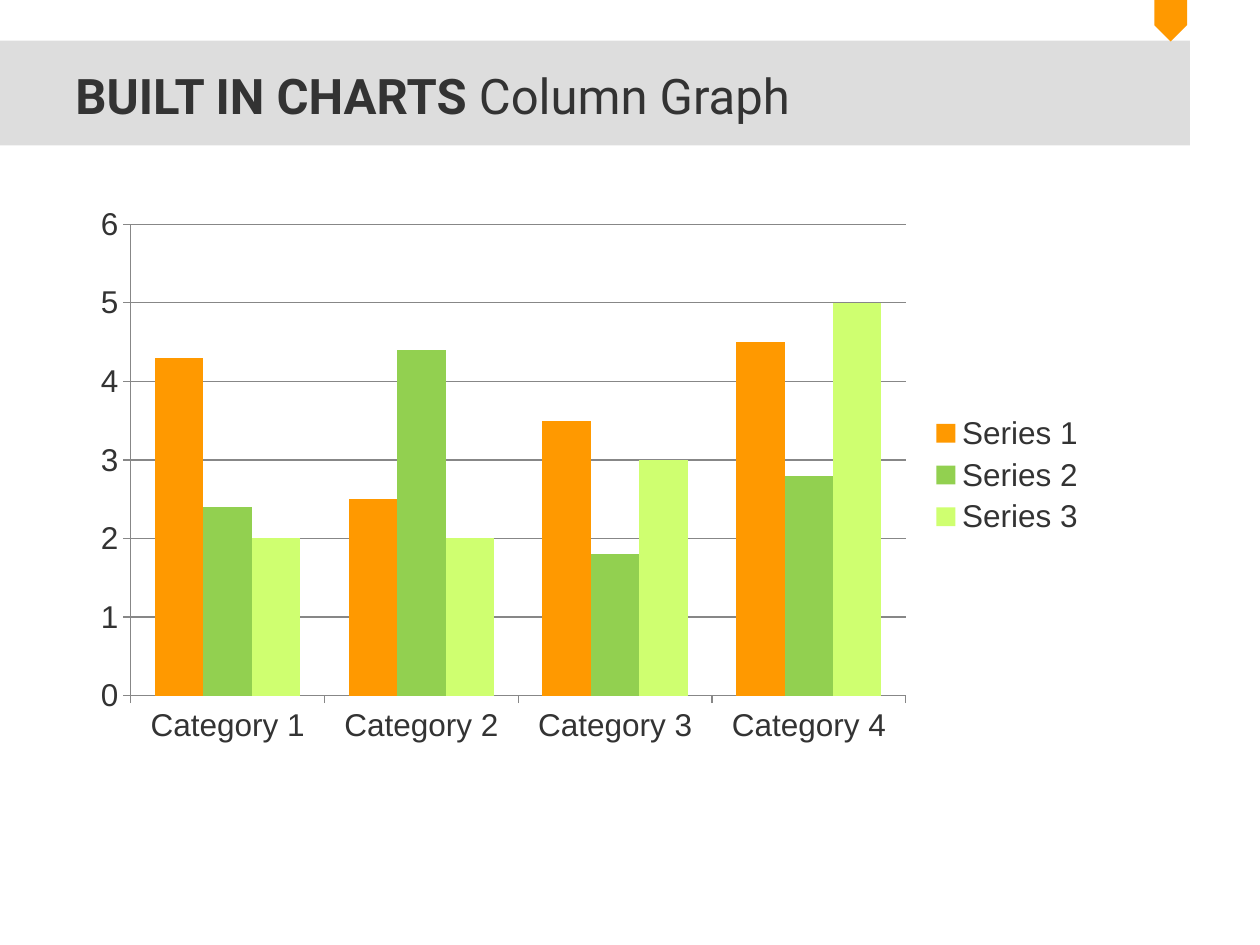
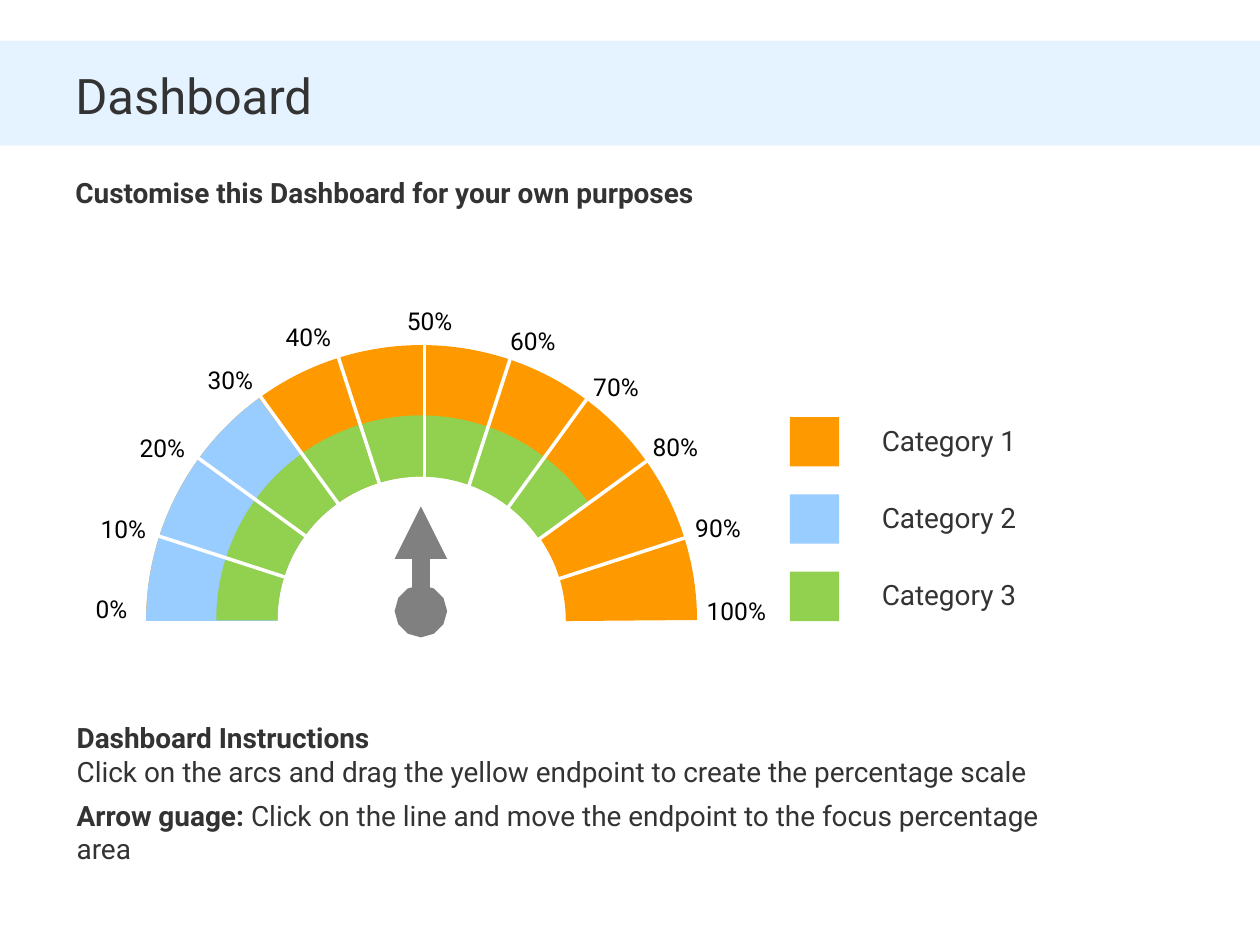
import math
from dataclasses import dataclass
from lxml import etree
from pptx import Presentation
from pptx.chart.data import CategoryChartData
from pptx.dml.color import RGBColor
from pptx.enum import chart as charts, shapes, text
from pptx.oxml import ns
from pptx.util import Pt


@dataclass(frozen=True)
class Theme:
    ink: str = "333333"
    black: str = "000000"
    white: str = "FFFFFF"
    band: str = "DDDDDD"
    orange: str = "FF9900"
    blue: str = "99CCFF"
    green: str = "92D050"
    lime: str = "CFFF70"
    needle: str = "808080"
    axis: str = "878787"
    font: str = "Roboto"
    chart_font: str = "Arial"
    title_size: int = 28
    chart_size: int = 18
    body_size: int = 16
    label_size: int = 14


theme = Theme()


def add_block(slide, kind, left, top, width, height, fill):
    shape = slide.shapes.add_shape(kind, Pt(left), Pt(top), Pt(width), Pt(height))
    shape.shadow.inherit = False
    shape.fill.solid()
    shape.fill.fore_color.rgb = RGBColor.from_string(fill)
    shape.line.fill.background()
    return shape


def add_text(parent, left, top, width, height, paragraphs, size, colour=theme.ink, grow=True):
    """Each paragraph is a list of (wording, bold) runs."""
    box = parent.shapes.add_textbox(Pt(left), Pt(top), Pt(width), Pt(height))
    frame = box.text_frame
    frame.word_wrap = True
    frame.auto_size = text.MSO_AUTO_SIZE.SHAPE_TO_FIT_TEXT if grow else text.MSO_AUTO_SIZE.NONE
    for index, runs in enumerate(paragraphs):
        paragraph = frame.add_paragraph() if index else frame.paragraphs[0]
        font = paragraph.font
        font.name, font.size = theme.font, Pt(size)
        font.color.rgb = RGBColor.from_string(colour)
        for wording, bold in runs:
            run = paragraph.add_run()
            run.text = wording
            run.font.name, run.font.size = theme.font, Pt(size)
            run.font.color.rgb = RGBColor.from_string(colour)
            run.font.bold = bold
    return frame


presentation = Presentation()
presentation.slide_width, presentation.slide_height = Pt(720), Pt(540)

# Title bands shared by both slides
headers = [
    (680, theme.band, [("BUILT IN CHARTS ", True), ("Column Graph", False)]),
    (720, theme.blue, [("Dashboard", False)]),
]
slides = []
for band_width, band_colour, title in headers:
    slide = presentation.slides.add_slide(presentation.slide_layouts[6])
    band = add_block(slide, shapes.MSO_SHAPE.RECTANGLE, 0, 23.3, band_width, 59.8, band_colour)
    if band_colour == theme.blue:
        tint = band.fill._xPr.find(".//" + ns.qn("a:srgbClr"))
        etree.SubElement(tint, ns.qn("a:alpha"), val="25000")
    frame = add_text(slide, 36, 31.7, 648, 80, [title], theme.title_size, grow=False)
    frame.margin_top = Pt(6)
    slides.append(slide)
chart_slide, dashboard = slides

# Column chart
data = CategoryChartData()
data.categories = [f"Category {number}" for number in range(1, 5)]
columns = [
    (theme.orange, (4.3, 2.5, 3.5, 4.5)),
    (theme.green, (2.4, 4.4, 1.8, 2.8)),
    (theme.lime, (2, 2, 3, 5)),
]
for number, (colour, values) in enumerate(columns, 1):
    data.add_series(f"Series {number}", values)
chart = chart_slide.shapes.add_chart(
    charts.XL_CHART_TYPE.COLUMN_CLUSTERED, Pt(46), Pt(111.6), Pt(581.8), Pt(319.7), data).chart
chart.has_title = False
chart.font.name, chart.font.size = theme.chart_font, Pt(theme.chart_size)
chart.font.color.rgb = RGBColor.from_string(theme.ink)
chart.has_legend = True
chart.legend.position = charts.XL_LEGEND_POSITION.RIGHT
chart.legend.include_in_layout = False
plot = chart.plots[0]
plot.gap_width, plot.overlap, plot.vary_by_categories = 100, 0, False
for series, (colour, values) in zip(plot.series, columns):
    series.format.fill.solid()
    series.format.fill.fore_color.rgb = RGBColor.from_string(colour)
value_axis = chart.value_axis
value_axis.minimum_scale, value_axis.maximum_scale, value_axis.major_unit = 0, 6, 1
value_axis.has_major_gridlines = True
for axis in (chart.category_axis, value_axis):
    axis.major_tick_mark = charts.XL_TICK_MARK.OUTSIDE
for part in (chart.category_axis, value_axis, value_axis.major_gridlines):
    part.format.line.color.rgb = RGBColor.from_string(theme.axis)
    part.format.line.width = Pt(0.75)

# Corner tab
tab = add_block(chart_slide, shapes.MSO_SHAPE.PENTAGON, 656, 1.4, 25.9, 18.7, theme.orange)
tab.rotation = 90

# Percentage labels around the gauge: left, top, width
label_places = [
    (47.5, 336.2, 51), (50.4, 290.2, 53), (72.7, 244.1, 62), (111.6, 205.2, 55),
    (156.2, 180.7, 56), (225.4, 171.4, 52), (284.4, 182.9, 72), (331.9, 208.8, 57),
    (365.8, 243.4, 54), (390.2, 289.4, 51), (396.7, 337, 60),
]
labels = dashboard.shapes.add_group_shape()
for step, (left, top, width) in enumerate(label_places):
    add_text(labels, left, top, width, 24.5, [[(f"{step * 10}%", False)]],
             theme.label_size, theme.black)

# Gauge arcs: left, top, diameter, end angle, colour, thickness
arcs = [
    (121, 234.7, 239.8, 0, theme.orange, 75),
    (121, 234.7, 239.8, 233.95, theme.blue, 75),
    (141.1, 254.9, 198.7, 325.6, theme.green, 35),
]
for left, top, diameter, end_angle, colour, thickness in arcs:
    arc = dashboard.shapes.add_shape(
        shapes.MSO_SHAPE.ARC, Pt(left), Pt(top), Pt(diameter), Pt(diameter))
    arc.shadow.inherit = False
    arc.adjustments[0] = 179.82 * 0.6  # adjustment units per degree
    arc.adjustments[1] = end_angle * 0.6
    arc.fill.background()
    arc.line.color.rgb = RGBColor.from_string(colour)
    arc.line.width = Pt(thickness)

# White dividers every 18 degrees, then the needle
hub_x, hub_y, radius = 242.6, 355.7, 162.5
dividers = dashboard.shapes.add_group_shape()
strokes = []
for step in range(10):
    angle = math.radians(180 - 18 * step)
    strokes.append((dividers, hub_x + radius * math.cos(angle), hub_y - radius * math.sin(angle),
                    hub_x, hub_y, theme.white, 2))
strokes.append((dashboard, 240.5, 349.2, 240.5, 289.4, theme.needle, 10))
for parent, start_x, start_y, end_x, end_y, colour, thickness in strokes:
    stroke = parent.shapes.add_connector(
        shapes.MSO_CONNECTOR.STRAIGHT, Pt(start_x), Pt(start_y), Pt(end_x), Pt(end_y))
    stroke.line.color.rgb = RGBColor.from_string(colour)
    stroke.line.width = Pt(thickness)
    etree.SubElement(stroke._element.spPr, ns.qn("a:effectLst"))
needle_line = stroke.line._get_or_add_ln()
etree.SubElement(needle_line, ns.qn("a:headEnd"), type="oval")
etree.SubElement(needle_line, ns.qn("a:tailEnd"), type="triangle")

# Legend
for row, colour in enumerate((theme.orange, theme.blue, theme.green)):
    top = 238.3 + 44.2 * row
    add_block(dashboard, shapes.MSO_SHAPE.RECTANGLE, 451.4, top, 28.2, 28.2, colour)
    add_text(dashboard, 496.8, top, 187.2, 26.6, [[(f"Category {row + 1}", False)]],
             theme.body_size)

# Heading and instructions
add_text(dashboard, 36, 96.5, 566, 48,
         [[("Customise this Dashboard for your own purposes", True)]], theme.body_size)
instructions = add_text(dashboard, 36.7, 408.2, 566, 113, [
    [("Dashboard Instructions", True)],
    [("Click on the arcs and drag the yellow endpoint to create the percentage scale", False)],
    [("Arrow guage: ", True),
     ("Click on the line and move the endpoint to the focus percentage area", False)],
], theme.body_size)
instructions.paragraphs[1].space_after = Pt(6)

presentation.save("out.pptx")
